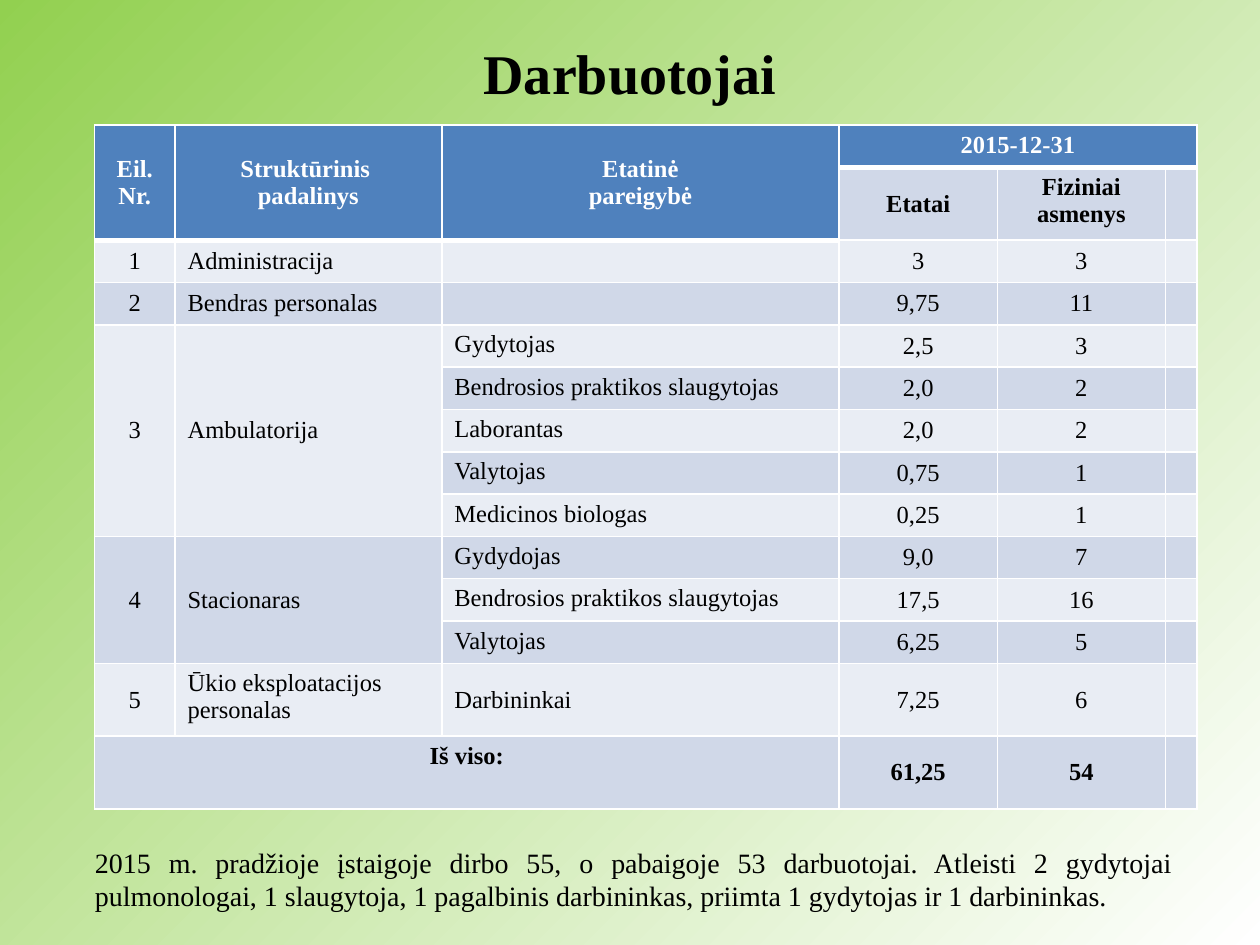
from dataclasses import dataclass

from lxml import etree
from pptx import Presentation
from pptx.dml.color import RGBColor
from pptx.enum import text as te
from pptx.oxml.ns import qn
from pptx.util import Pt


@dataclass(frozen=True)
class Theme:
    font: str = "Times New Roman"
    black: str = "000000"
    white: str = "FFFFFF"
    green: str = "92D050"
    header: str = "4F81BD"
    light: str = "E9EDF4"
    dark: str = "D0D8E8"
    title_size: int = 32
    note_size: int = 16
    cell_size: int = 14


THEME = Theme()
CENTER, LEFT, JUSTIFY = te.PP_ALIGN.CENTER, te.PP_ALIGN.LEFT, te.PP_ALIGN.JUSTIFY
TOP, MIDDLE = te.MSO_ANCHOR.TOP, te.MSO_ANCHOR.MIDDLE

COLUMN_WIDTHS = [46, 152.5, 227, 90.5, 96, 18]
ROW_HEIGHT, TALL_ROW_HEIGHT = 24.2, 41.6
TALL_ROWS = (1, 12, 13)
TOTAL_ROW = 13
STAFF = [
    ["Eil.\nNr.", "Struktūrinis \npadalinys", "Etatinė\npareigybė", "2015-12-31", "", ""],
    ["", "", "", "Etatai", "Fiziniai asmenys", ""],
    ["1", "Administracija", "", "3", "3", ""],
    ["2", "Bendras personalas", "", "9,75", "11", ""],
    ["3", "Ambulatorija", "Gydytojas", "2,5", "3", ""],
    ["", "", "Bendrosios praktikos slaugytojas", "2,0", "2", ""],
    ["", "", "Laborantas", "2,0", "2", ""],
    ["", "", "Valytojas", "0,75", "1", ""],
    ["", "", "Medicinos biologas", "0,25", "1", ""],
    ["4", "Stacionaras", "Gydydojas", "9,0", "7", ""],
    ["", "", "Bendrosios praktikos slaugytojas", "17,5", "16", ""],
    ["", "", "Valytojas", "6,25", "5", ""],
    ["5", "Ūkio eksploatacijos\npersonalas", "Darbininkai", "7,25", "6", ""],
    ["Iš viso:", "", "", "61,25", "54", ""],
]
MERGES = [((0, col), (1, col)) for col in range(3)]
MERGES += [((first, col), (last, col)) for first, last in ((4, 8), (9, 11)) for col in range(2)]
MERGES += [((0, 3), (0, 5)), ((13, 0), (13, 2))]
TOP_CELLS = {(0, 3), (1, 4), (12, 1), (13, 0)} | {(row, 2) for row in range(4, 12)}

NOTE = (
    "2015 m. pradžioje įstaigoje dirbo 55, o pabaigoje 53 darbuotojai. "
    "Atleisti 2 gydytojai pulmonologai, 1 slaugytoja, 1 pagalbinis darbininkas, "
    "priimta 1 gydytojas ir 1 darbininkas."
)


def rgb(value):
    return RGBColor.from_string(value)


def paint_background(slide):
    fill = slide.background.fill
    fill.gradient()
    fill.gradient_angle = 315
    for stop, color in zip(fill.gradient_stops, (THEME.green, THEME.white)):
        stop.color.rgb = rgb(color)


def write(frame, content, size, align, color=THEME.black, bold=False):
    for index, line in enumerate(content.split("\n")):
        paragraph = frame.add_paragraph() if index else frame.paragraphs[0]
        paragraph.alignment = align
        if not line:
            etree.SubElement(paragraph._p, qn("a:endParaRPr"), sz=str(size * 100))
            continue
        run = paragraph.add_run()
        run.text = line
        run.font.name = THEME.font
        run.font.size = Pt(size)
        run.font.bold = bold
        run.font.color.rgb = rgb(color)


def add_text(slide, box, content, size, align, anchor=TOP, bold=False):
    frame = slide.shapes.add_textbox(*map(Pt, box)).text_frame
    frame.word_wrap = True
    frame.vertical_anchor = anchor
    write(frame, content, size, align, bold=bold)


def is_header(row, col):
    return row == 0 or (row == 1 and col < 3)


def draw_borders(cell, row, col):
    below_header = row > 0 and not is_header(row, col) and is_header(row - 1, col)
    above_body = is_header(row, col) and not is_header(row + 1, col)
    widths = {
        "lnL": 1,
        "lnR": 1,
        "lnT": 3 if below_header else 1,
        "lnB": 3 if above_body or is_header(row, col) and row == 0 else 1,
    }
    properties = cell._tc.get_or_add_tcPr()
    for side, width in widths.items():
        border = etree.SubElement(properties, qn(f"a:{side}"), w=str(Pt(width)))
        solid = etree.SubElement(border, qn("a:solidFill"))
        etree.SubElement(solid, qn("a:srgbClr"), val=THEME.white)


def format_cell(cell, row, col, content):
    header = is_header(row, col)
    in_body = 2 <= row < TOTAL_ROW
    draw_borders(cell, row, col)
    cell.fill.solid()
    band = THEME.dark if row % 2 else THEME.light
    cell.fill.fore_color.rgb = rgb(THEME.header if header else band)
    cell.vertical_anchor = TOP if (row, col) in TOP_CELLS else MIDDLE
    write(
        cell.text_frame,
        content,
        THEME.cell_size,
        LEFT if in_body and col in (1, 2) else CENTER,
        THEME.white if header else THEME.black,
        bold=not in_body,
    )


def add_staff_table(slide, left, top):
    heights = [TALL_ROW_HEIGHT if row in TALL_ROWS else ROW_HEIGHT for row in range(len(STAFF))]
    box = left, top, sum(COLUMN_WIDTHS), sum(heights)
    table = slide.shapes.add_table(len(STAFF), len(COLUMN_WIDTHS), *map(Pt, box)).table
    table.first_row = table.horz_banding = False
    for column, width in zip(table.columns, COLUMN_WIDTHS):
        column.width = Pt(width)
    for table_row, height in zip(table.rows, heights):
        table_row.height = Pt(height)
    for row, entries in enumerate(STAFF):
        for col, content in enumerate(entries):
            format_cell(table.cell(row, col), row, col, content)
    for first, last in MERGES:
        table.cell(*first).merge(table.cell(*last))


def main():
    presentation = Presentation()
    presentation.slide_width, presentation.slide_height = Pt(720), Pt(540)
    slide = presentation.slides.add_slide(presentation.slide_layouts[6])
    paint_background(slide)
    add_text(slide, (36, 21.6, 648, 39), "Darbuotojai", THEME.title_size, CENTER, MIDDLE, bold=True)
    add_staff_table(slide, 54, 71.5)
    add_text(slide, (47.2, 479.5, 630, 46), NOTE, THEME.note_size, JUSTIFY)
    presentation.save("out.pptx")


if __name__ == "__main__":
    main()
